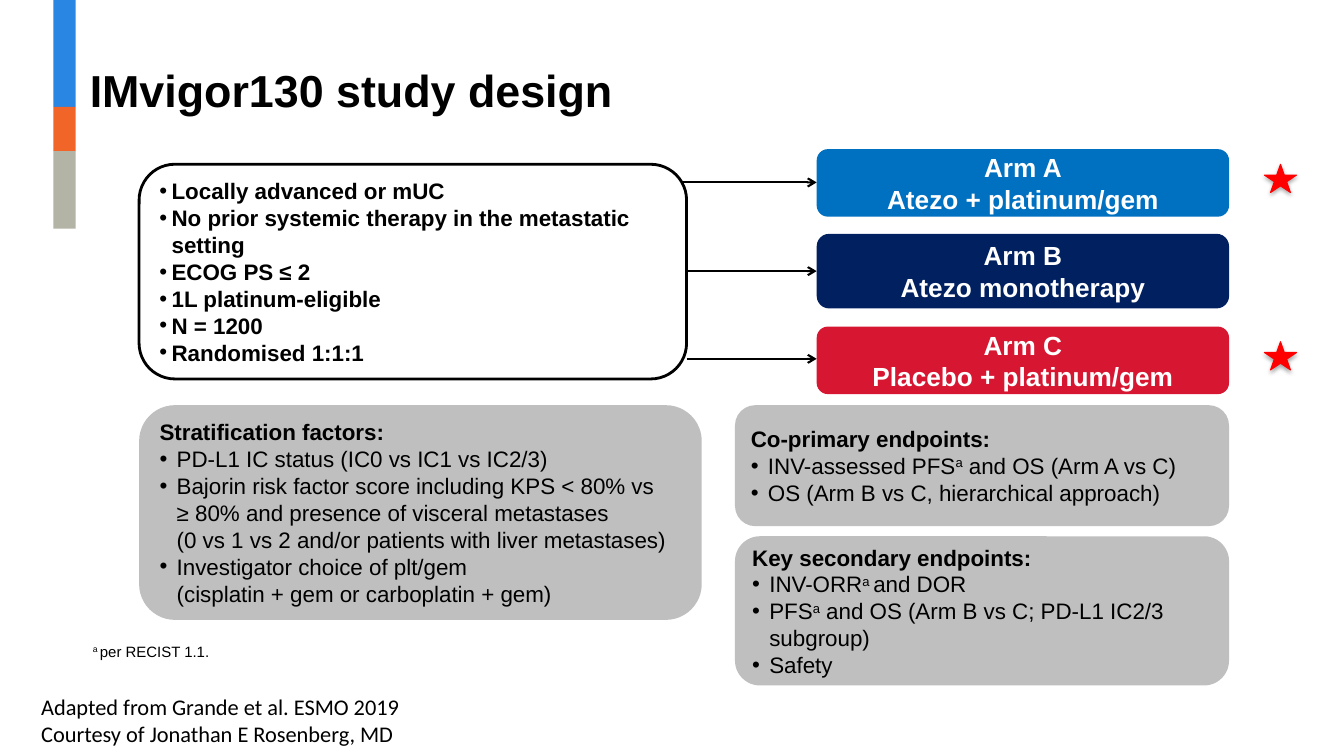
from pptx import Presentation
from pptx.dml.color import RGBColor
from pptx.enum.shapes import MSO_CONNECTOR as Connector, MSO_SHAPE as Shape
from pptx.enum.text import MSO_ANCHOR as Anchor, PP_ALIGN as Align
from pptx.oxml.ns import qn
from pptx.util import Inches, Pt
from lxml.etree import SubElement

COLORS = {
    "black": "000000", "white": "FFFFFF", "gray": "BFBFBF", "star": "FF0000",
    "bar_blue": "2986E2", "bar_orange": "F26529", "bar_stone": "B3B3A6",
    "arm_a": "0070C0", "arm_b": "002060", "arm_c": "D71732",
}
CRITERIA = [
    "Locally advanced or mUC",
    "No prior systemic therapy in the metastatic setting",
    "ECOG PS ≤ 2",
    "1L platinum-eligible",
    "N = 1200",
    "Randomised 1:1:1",
]
ARMS = [
    ("arm_a", 1.48, 0.67, ["Arm A", "Atezo + platinum/gem"], 6.67, 1.81),
    ("arm_b", 2.32, 0.74, ["Arm B", "Atezo monotherapy"], 6.81, 2.69),
    ("arm_c", 3.24, 0.67, ["Arm C", "Placebo + platinum/gem"], 6.81, 3.56),
]
PANELS = [
    ((1.38, 4.02, 5.58, 2.13), "Stratification factors:", [
        "PD-L1 IC status (IC0 vs IC1 vs IC2/3)",
        "Bajorin risk factor score including KPS < 80% vs \n"
        "≥ 80% and presence of visceral metastases \n"
        "(0 vs 1 vs 2 and/or patients with liver metastases)",
        "Investigator choice of plt/gem \n(cisplatin + gem or carboplatin + gem)",
    ]),
    ((7.29, 4.02, 4.9, 1.2), "Co-primary endpoints:", [
        "INV-assessed PFS^a^ and OS (Arm A vs C)",
        "OS (Arm B vs C, hierarchical approach)",
    ]),
    ((7.29, 5.32, 4.9, 1.48), "Key secondary endpoints:", [
        "INV-ORR^a ^and DOR",
        "PFS^a^ and OS (Arm B vs C; PD-L1 IC2/3 subgroup)",
        "Safety",
    ]),
]


def color(name):
    """Return the named colour."""
    return RGBColor.from_string(COLORS[name])


def write(frame, lines, size=16, bold=False, ink="black", font="Arial",
          align=Align.LEFT, anchor=Anchor.MIDDLE, hang=0, heading=None):
    """Fill a text frame; ^ marks toggle superscript and hang adds bullets."""
    frame.word_wrap = True
    frame.vertical_anchor = anchor
    entries = [(heading, True, 0)] if heading else []
    entries += [(line, bold, hang) for line in lines]
    for index, (line, strong, indent) in enumerate(entries):
        para = frame.add_paragraph() if index else frame.paragraphs[0]
        para.alignment = align
        if indent:
            props = para._p.get_or_add_pPr()
            props.set("marL", str(Inches(indent)))
            props.set("indent", str(-Inches(indent)))
            SubElement(props, qn("a:buFont"), typeface="Arial")
            SubElement(props, qn("a:buChar"), char="•")
        for row, part in enumerate(line.split("\n")):
            if row:
                para.add_line_break()
            for turn, words in enumerate(part.split("^")):
                if not words:
                    continue
                span = para.add_run()
                span.text = words
                span.font.name, span.font.size = font, Pt(size)
                span.font.bold = strong
                span.font.color.rgb = color(ink)
                if turn % 2:
                    span._r.get_or_add_rPr().set("baseline", "30000")


def add_block(page, kind, box, fill, line=None, width=1):
    """Add a filled preset shape in the given box."""
    shape = page.shapes.add_shape(kind, *map(Inches, box))
    shape.shadow.inherit = False
    shape.fill.solid()
    shape.fill.fore_color.rgb = color(fill)
    if line:
        shape.line.color.rgb = color(line)
        shape.line.width = Pt(width)
    else:
        shape.line.fill.background()
    return shape


def add_arrow(page, left, right, top):
    """Add a horizontal arrow."""
    arrow = page.shapes.add_connector(
        Connector.STRAIGHT, *map(Inches, (left, top, right, top)))
    arrow.line.color.rgb = color("black")
    arrow.line.width = Pt(1.5)
    SubElement(arrow.line._get_or_add_ln(), qn("a:tailEnd"), type="arrow")
    SubElement(arrow._element.spPr, qn("a:effectLst"))


def add_star(page, box):
    """Add a red star with a soft shadow below it."""
    star = add_block(page, Shape.STAR_5_POINT, box, "star", "star", 0.75)
    effects = star._element.spPr.find(qn("a:effectLst"))
    shadow = SubElement(effects, qn("a:outerShdw"), blurRad=str(Pt(3.1)),
                        dist=str(Pt(1.8)), dir="5400000", rotWithShape="0")
    tint = SubElement(shadow, qn("a:srgbClr"), val=COLORS["black"])
    SubElement(tint, qn("a:alpha"), val="35000")


def add_header(page, box):
    """Place the side bars and the title beside them."""
    left, top, width, height = box
    bars = [("bar_blue", 1.06), ("bar_orange", 0.44), ("bar_stone", 0.77)]
    bar_top = top
    for fill, size in bars:
        add_block(page, Shape.RECTANGLE, (left, bar_top, 0.22, size), fill)
        bar_top += size
    title = page.shapes.title
    title.left, title.top = Inches(left + 0.26), Inches(top + 0.6)
    title.width, title.height = Inches(width - 0.26), Inches(height)
    write(title.text_frame, ["IMvigor130 study design"], size=32, bold=True,
          anchor=Anchor.BOTTOM)


def add_design(page, box):
    """Place the eligibility box, the arrows and the three arms."""
    left, top, width, height = box
    arm_left = left + 6.72
    for fill, arm_top, arm_height, lines, start, level in ARMS:
        add_arrow(page, start, arm_left, level)
        arm = add_block(page, Shape.ROUNDED_RECTANGLE,
                        (arm_left, arm_top, 4.09, arm_height), fill)
        write(arm.text_frame, lines, size=18.7, bold=True, ink="white",
              align=Align.CENTER)
    criteria = add_block(page, Shape.ROUNDED_RECTANGLE,
                         (left, top, width, height), "white", "black", 2)
    write(criteria.text_frame, CRITERIA, bold=True, hang=0.12)
    for star_top in (top, top + 1.76):
        add_star(page, (left + 11.16, star_top, 0.32, 0.28))


def add_panel(page, box, heading, points):
    """Place a gray panel with a heading and bullets."""
    panel = add_block(page, Shape.ROUNDED_RECTANGLE, box, "gray")
    write(panel.text_frame, points, heading=heading, hang=0.17)


def add_note(page, box, lines, inset=(0.1, 0.05), **style):
    """Place a text box with the given insets."""
    frame = page.shapes.add_textbox(*map(Inches, box)).text_frame
    frame.margin_left = frame.margin_right = Inches(inset[0])
    frame.margin_top = frame.margin_bottom = Inches(inset[1])
    write(frame, lines, **style)


def main():
    """Build and save the slide."""
    deck = Presentation()
    deck.slide_width, deck.slide_height = Inches(13.33), Inches(7.5)
    page = deck.slides.add_slide(deck.slide_layouts[5])
    add_header(page, (0.53, 0, 12.01, 0.61))
    add_design(page, (1.38, 1.63, 5.43, 2.13))
    for box, heading, points in PANELS:
        add_panel(page, box, heading, points)
    add_note(page, (0.79, 6.25, 6.02, 0.37), ["^a ^per RECIST 1.1."],
             inset=(0.13, 0.07), size=10.7, anchor=Anchor.BOTTOM)
    add_note(page, (0.31, 6.83, 4.58, 0.64),
             ["Adapted from Grande et al. ESMO 2019",
              "Courtesy of Jonathan E Rosenberg, MD"],
             font="Calibri", anchor=Anchor.TOP)
    deck.save("out.pptx")


if __name__ == "__main__":
    main()
